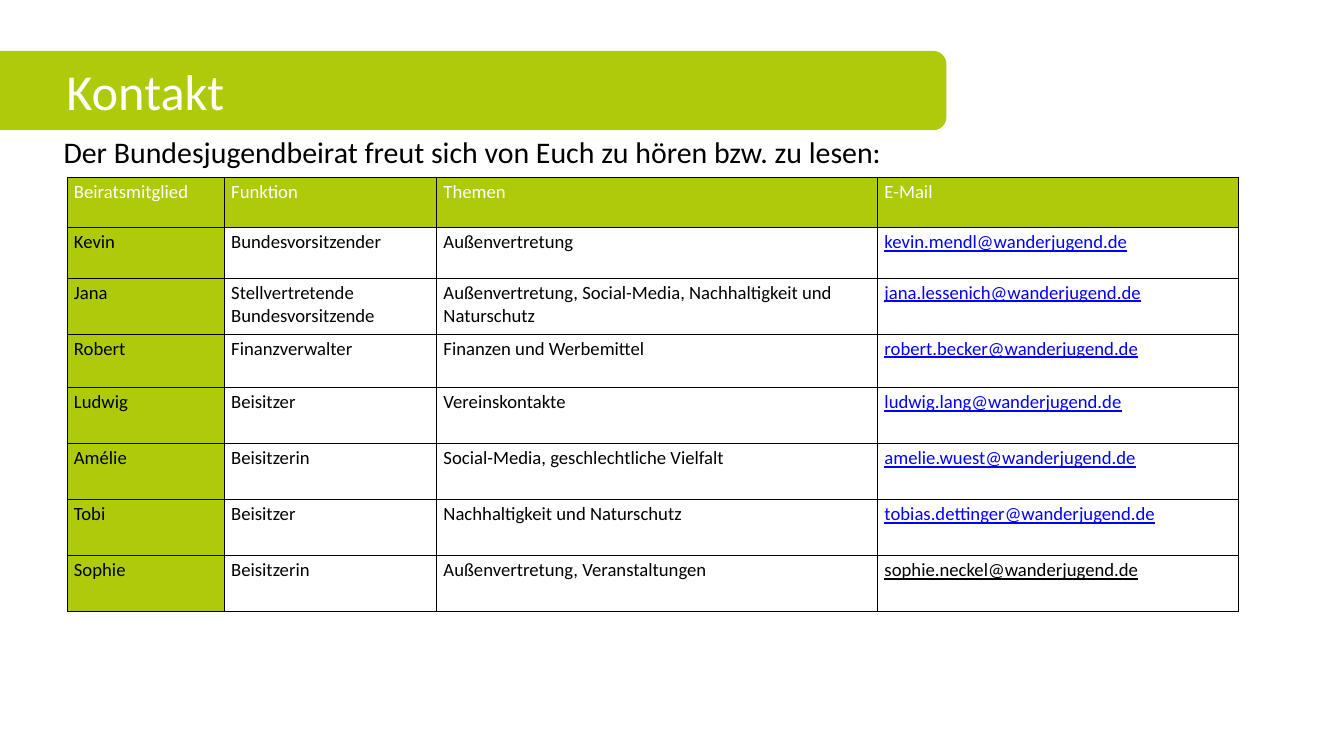
from dataclasses import dataclass

from lxml.etree import SubElement
from pptx import Presentation
from pptx.dml.color import RGBColor as RGB
from pptx.enum.shapes import MSO_SHAPE as SHAPE
from pptx.enum.text import MSO_ANCHOR as ANCHOR
from pptx.oxml.ns import qn
from pptx.util import Pt


@dataclass(frozen=True)
class Theme:
    font: str = "Calibri"
    green: str = "AFCA0B"
    white: str = "FFFFFF"
    black: str = "000000"
    link: str = "0000FF"
    title: int = 54
    lead: int = 32
    cell: int = 20
    border: int = 1


class Deck:
    def __init__(self, prs, theme):
        self.theme = theme
        self.s = prs.slides.add_slide(prs.slide_layouts[6])

    def run(self, tf, text, size, color, underline=False):
        r = tf.paragraphs[0].add_run()
        r.text = text
        r.font.name = self.theme.font
        r.font.size = Pt(size)
        r.font.underline = underline
        r.font.color.rgb = RGB.from_string(color)

    def fill(self, target, color):
        target.fill.solid()
        target.fill.fore_color.rgb = RGB.from_string(color)

    def banner(self, text, x, y, w, h, indent):
        sp = self.s.shapes.add_shape(SHAPE.ROUNDED_RECTANGLE, Pt(x), Pt(y), Pt(w), Pt(h))
        sp.shadow.inherit = False
        self.fill(sp, self.theme.green)
        sp.line.fill.background()
        tf = sp.text_frame
        tf.vertical_anchor = ANCHOR.MIDDLE
        tf.margin_left = Pt(indent)
        tf.paragraphs[0].alignment = 1
        self.run(tf, text, self.theme.title, self.theme.white)

    def lead(self, text, x, y, w, h):
        tf = self.s.shapes.add_textbox(Pt(x), Pt(y), Pt(w), Pt(h)).text_frame
        tf.word_wrap = True
        self.run(tf, text, self.theme.lead, self.theme.black)

    def borders(self, cell):
        tc_pr = cell._tc.get_or_add_tcPr()
        for i, side in enumerate(("lnL", "lnR", "lnT", "lnB")):
            ln = tc_pr.makeelement(qn(f"a:{side}"), {"w": str(Pt(self.theme.border))})
            SubElement(SubElement(ln, qn("a:solidFill")), qn("a:srgbClr"), val=self.theme.black)
            tc_pr.insert(i, ln)

    def table(self, rows, x, y, widths, heights, style):
        tbl = self.s.shapes.add_table(
            len(rows), len(widths), Pt(x), Pt(y), Pt(sum(widths)), Pt(sum(heights))
        ).table
        tbl.horz_banding = False
        for col, w in zip(tbl.columns, widths):
            col.width = Pt(w)
        for i, (row, h) in enumerate(zip(rows, heights)):
            tbl.rows[i].height = Pt(h)
            for j, text in enumerate(row):
                cell = tbl.cell(i, j)
                fill, color, underline = style(i, j)
                self.fill(cell, fill)
                self.borders(cell)
                self.run(cell.text_frame, text, self.theme.cell, color, underline)


HEADER = ("Beiratsmitglied", "Funktion", "Themen", "E-Mail")
MEMBERS = [
    ("Kevin", "Bundesvorsitzender", "Außenvertretung", "kevin.mendl"),
    ("Jana", "Stellvertretende Bundesvorsitzende",
     "Außenvertretung, Social-Media, Nachhaltigkeit und Naturschutz", "jana.lessenich"),
    ("Robert", "Finanzverwalter", "Finanzen und Werbemittel", "robert.becker"),
    ("Ludwig", "Beisitzer", "Vereinskontakte", "ludwig.lang"),
    ("Amélie", "Beisitzerin", "Social-Media, geschlechtliche Vielfalt", "amelie.wuest"),
    ("Tobi", "Beisitzer", "Nachhaltigkeit und Naturschutz", "tobias.dettinger"),
    ("Sophie", "Beisitzerin", "Außenvertretung, Veranstaltungen", "sophie.neckel"),
]


def main():
    prs = Presentation()
    prs.slide_width, prs.slide_height = Pt(1440), Pt(810)
    theme = Theme()
    deck = Deck(prs, theme)

    def contact_style(row, col):
        if row == 0:
            return theme.green, theme.white, False
        if col == 0:
            return theme.green, theme.black, False
        is_mail = col == len(HEADER) - 1
        is_link = is_mail and row < len(MEMBERS)
        return theme.white, theme.link if is_link else theme.black, is_mail

    rows = [HEADER] + [(*m, f"{user}@wanderjugend.de") for *m, user in MEMBERS]
    deck.lead("Der Bundesjugendbeirat freut sich von Euch zu hören bzw. zu lesen:",
              61, 139.5, 933, 50)
    deck.table(rows, 72, 190, (168.5, 227.5, 472.5, 386),
               (54, 54, 60, 57.5) + (60,) * 4, contact_style)
    deck.banner("Kontakt", -54, 54.5, 1068, 85, 121)
    prs.save("out.pptx")


if __name__ == "__main__":
    main()
